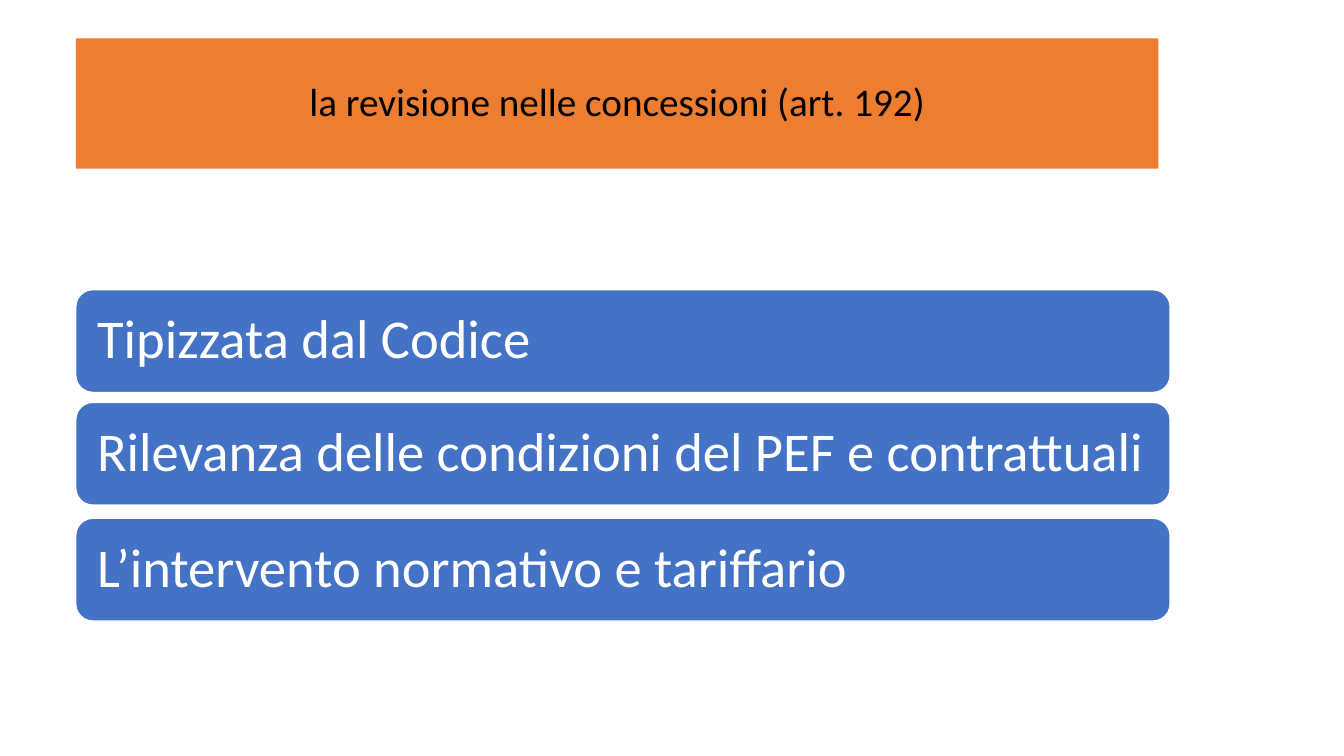
from dataclasses import dataclass

from pptx import Presentation
from pptx.dml.color import RGBColor
from pptx.enum.shapes import MSO_SHAPE
from pptx.enum.text import MSO_ANCHOR, MSO_AUTO_SIZE, PP_ALIGN
from pptx.shapes.autoshape import Shape
from pptx.slide import Slide
from pptx.util import Cm, Pt

ROUNDED = MSO_SHAPE.ROUNDED_RECTANGLE
MIDDLE = MSO_ANCHOR.MIDDLE
NO_FIT = MSO_AUTO_SIZE.NONE
LEFT, CENTER = PP_ALIGN.LEFT, PP_ALIGN.CENTER


@dataclass(frozen=True)
class Theme:
    font: str = "Calibri"
    banner: RGBColor = RGBColor(0xED, 0x7D, 0x31)
    card: RGBColor = RGBColor(0x44, 0x72, 0xC4)
    light: RGBColor = RGBColor(0xFF, 0xFF, 0xFF)
    dark: RGBColor = RGBColor(0, 0, 0)
    title_size: int = 28
    card_size: int = 39


@dataclass(frozen=True)
class Card:
    text: str
    top: float


THEME = Theme()
MARGIN = 1.91
TITLE = "la revisione nelle concessioni (art. 192)"
CARDS = [
    Card("Tipizzata dal Codice", 7.3),
    Card("Rilevanza delle condizioni del PEF e contrattuali", 10.14),
    Card("L’intervento normativo e tariffario", 13.06),
]


def write_text(sp: Shape, text: str, size: int, color: RGBColor, align: PP_ALIGN) -> None:
    tf = sp.text_frame
    tf.text = text
    tf.word_wrap = True
    tf.auto_size = NO_FIT
    tf.vertical_anchor = MIDDLE
    p = tf.paragraphs[0]
    p.alignment = align
    p.line_spacing = 0.9
    p.font.name = THEME.font
    p.font.size = Pt(size)
    p.font.color.rgb = color


def add_title(s: Slide) -> None:
    sp = s.shapes.title
    sp.left, sp.top, sp.width, sp.height = Cm(MARGIN), Cm(0.97), Cm(27.28), Cm(3.28)
    sp.fill.solid()
    sp.fill.fore_color.rgb = THEME.banner
    write_text(sp, TITLE, THEME.title_size, THEME.dark, CENTER)


def add_card(s: Slide, card: Card) -> None:
    sp = s.shapes.add_shape(ROUNDED, Cm(MARGIN), Cm(card.top), Cm(27.58), Cm(2.59))
    sp.shadow.inherit = False
    sp.fill.solid()
    sp.fill.fore_color.rgb = THEME.card
    sp.line.color.rgb = THEME.light
    sp.line.width = Pt(1)
    write_text(sp, card.text, THEME.card_size, THEME.light, LEFT)
    tf = sp.text_frame
    tf.margin_left = tf.margin_right = tf.margin_top = tf.margin_bottom = Cm(0.41)


def main() -> None:
    prs = Presentation()
    prs.slide_width, prs.slide_height = Cm(33.87), Cm(19.05)
    s = prs.slides.add_slide(prs.slide_layouts[5])
    add_title(s)
    for card in CARDS:
        add_card(s, card)
    prs.save("out.pptx")


if __name__ == "__main__":
    main()
